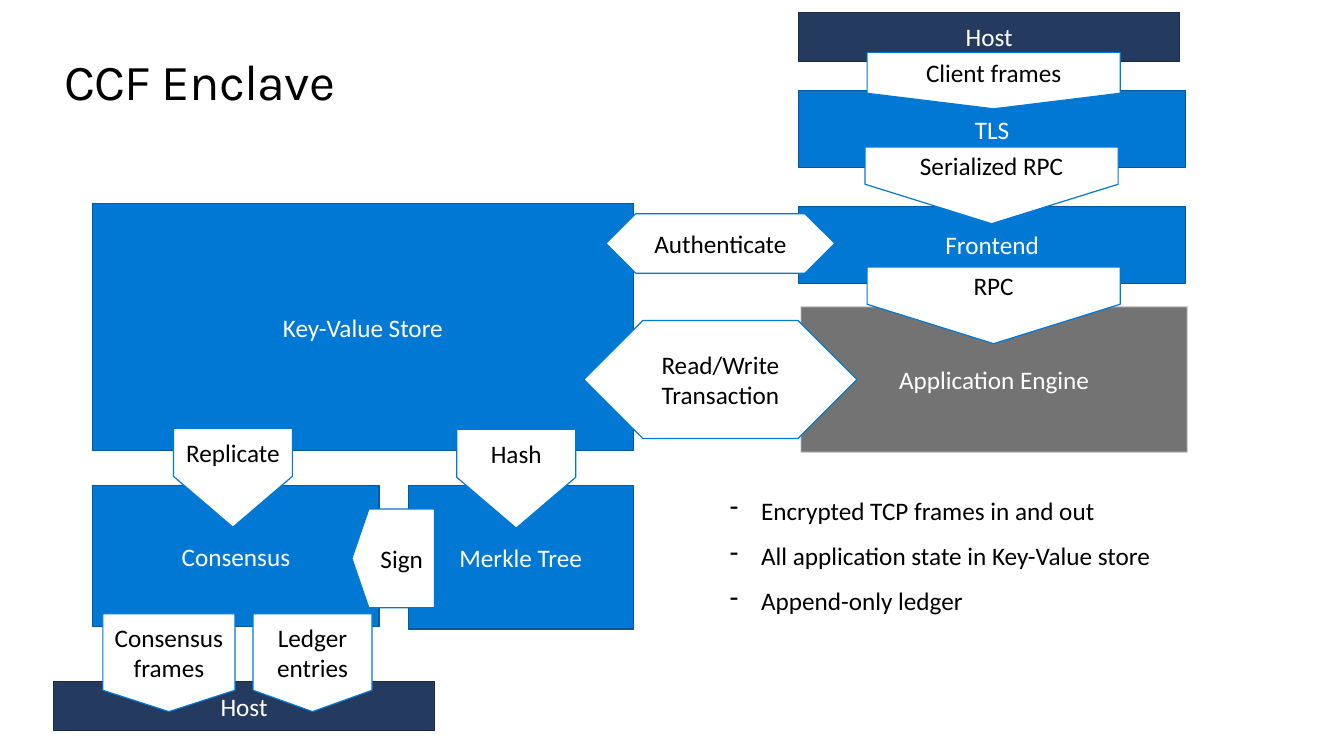
from lxml import etree
from pptx import Presentation
from pptx.dml.color import RGBColor
from pptx.enum.shapes import MSO_SHAPE
from pptx.enum.text import MSO_ANCHOR, PP_ALIGN
from pptx.oxml.ns import qn
from pptx.util import Emu, Pt

RECT = MSO_SHAPE.RECTANGLE
DOWN = MSO_SHAPE.DOWN_ARROW
LEFT = MSO_SHAPE.LEFT_ARROW
BOTH = MSO_SHAPE.LEFT_RIGHT_ARROW
MIDDLE = MSO_ANCHOR.MIDDLE
CENTER = PP_ALIGN.CENTER

PX = 9144  # 100 px to the inch
WHITE, BLACK, BLUE = "FFFFFF", "000000", "0078D4"
BODY = {"name": "Calibri", "size": Pt(18)}

# Fill, line colour, line width in points
HOST = ("243A5E", "1B2B46", 0.85)
CORE = (BLUE, "00599D", 0.85)
ENGINE = ("737373", "F9F9F9", 1.35)
FLOW = (WHITE, BLUE, 0.85)

# Text, style, left, top, width, height
BLOCKS = [
    ("Host", HOST, 792, 12, 378, 49),
    ("Host", HOST, 53, 676, 378, 49),
    ("Key-Value Store", CORE, 92, 202, 536, 245),
    ("Consensus", CORE, 92, 482, 284, 140),
    ("Merkle Tree", CORE, 405, 482, 223, 142),
    ("Application Engine", ENGINE, 794, 304, 384, 145),
    ("Frontend", CORE, 792, 205, 384, 76),
    ("TLS", CORE, 792, 90, 384, 76),
]

# Text, arrow kind, head length, left, top, width, height
FLOWS = [
    ("Authenticate", BOTH, 0.5, 601, 212, 227, 59),
    ("Read/Write\nTransaction", BOTH, 0.5, 579, 318, 271, 117),
    ("Replicate", DOWN, 0.515, 172, 425, 118, 98),
    ("Hash", DOWN, 0.515, 453, 426, 118, 98),
    ("Sign", LEFT, 0.205, 349, 505, 82, 98),
    ("RPC", DOWN, 0.515, 860, 265, 251, 76),
    ("Serialized RPC", DOWN, 0.515, 858, 146, 251, 76),
    ("Client frames", DOWN, 0.275, 860, 52, 251, 56),
    ("Ledger entries", DOWN, 0.218, 251, 609, 118, 97),
    ("Consensus\nframes", DOWN, 0.218, 102, 609, 131, 97),
]

POINTS = [
    "Encrypted TCP frames in and out",
    "All application state in Key-Value store",
    "Append-only ledger",
]


def px(*lengths):
    return [Emu(n * PX) for n in lengths]


def rgb(hex_code):
    return RGBColor.from_string(hex_code)


def set_font(font, color, values):
    for name, value in values.items():
        setattr(font, name, value)
    font.color.rgb = rgb(color)


def add_shape(slide, kind, text, style, color, box):
    fill, line, width = style
    sp = slide.shapes.add_shape(kind, *px(*box))
    sp.shadow.inherit = False
    sp.fill.solid()
    sp.fill.fore_color.rgb = rgb(fill)
    sp.line.color.rgb = rgb(line)
    sp.line.width = Pt(width)
    tf = sp.text_frame
    tf.word_wrap = True
    tf.vertical_anchor = MIDDLE
    tf.text = text
    for p in tf.paragraphs:
        p.alignment = CENTER
        set_font(p.runs[0].font, color, BODY)
    return sp


def add_arrow(slide, text, kind, head, box):
    sp = add_shape(slide, kind, text, FLOW, BLACK, box)
    sp.adjustments[0] = 1
    sp.adjustments[1] = head


def add_text_box(slide, text, box):
    tf = slide.shapes.add_textbox(*px(*box)).text_frame
    tf.word_wrap = True
    tf.text = text
    return tf


def add_title(slide, text, box):
    tf = add_text_box(slide, text, box)
    for side in ("left", "top", "right", "bottom"):
        setattr(tf, f"margin_{side}", 0)
    r = tf.paragraphs[0].runs[0]
    set_font(r.font, BLACK, {"name": "Karla", "size": Pt(36)})
    r.font._element.set("spc", "-50")


def add_dash_list(slide, points, box):
    tf = add_text_box(slide, "\n".join(points), box)
    indent = 31 * PX
    for p in tf.paragraphs:
        p.line_spacing = 1.5
        pPr = p._p.get_or_add_pPr()
        pPr.set("marL", str(indent))
        pPr.set("indent", str(-indent))
        etree.SubElement(pPr, qn("a:buChar"), char="-")
        set_font(p.runs[0].font, BLACK, BODY)


def fade_line(sp, percent):
    color = sp.line._ln.find(".//" + qn("a:srgbClr"))
    etree.SubElement(color, qn("a:alpha"), val=str(percent * 1000))


def main():
    prs = Presentation()
    prs.slide_width, prs.slide_height = px(1333, 750)
    slide = prs.slides.add_slide(prs.slide_layouts[6])

    add_title(slide, "CCF Enclave", (64, 50, 1205, 61))

    # Components
    for text, style, *box in BLOCKS:
        sp = add_shape(slide, RECT, text, style, WHITE, box)
        if style is ENGINE:
            fade_line(sp, 50)

    # Data passed between components
    for text, kind, head, *box in FLOWS:
        add_arrow(slide, text, kind, head, box)

    # Key points
    add_dash_list(slide, POINTS, (714, 471, 495, 142))

    prs.save("out.pptx")


if __name__ == "__main__":
    main()
